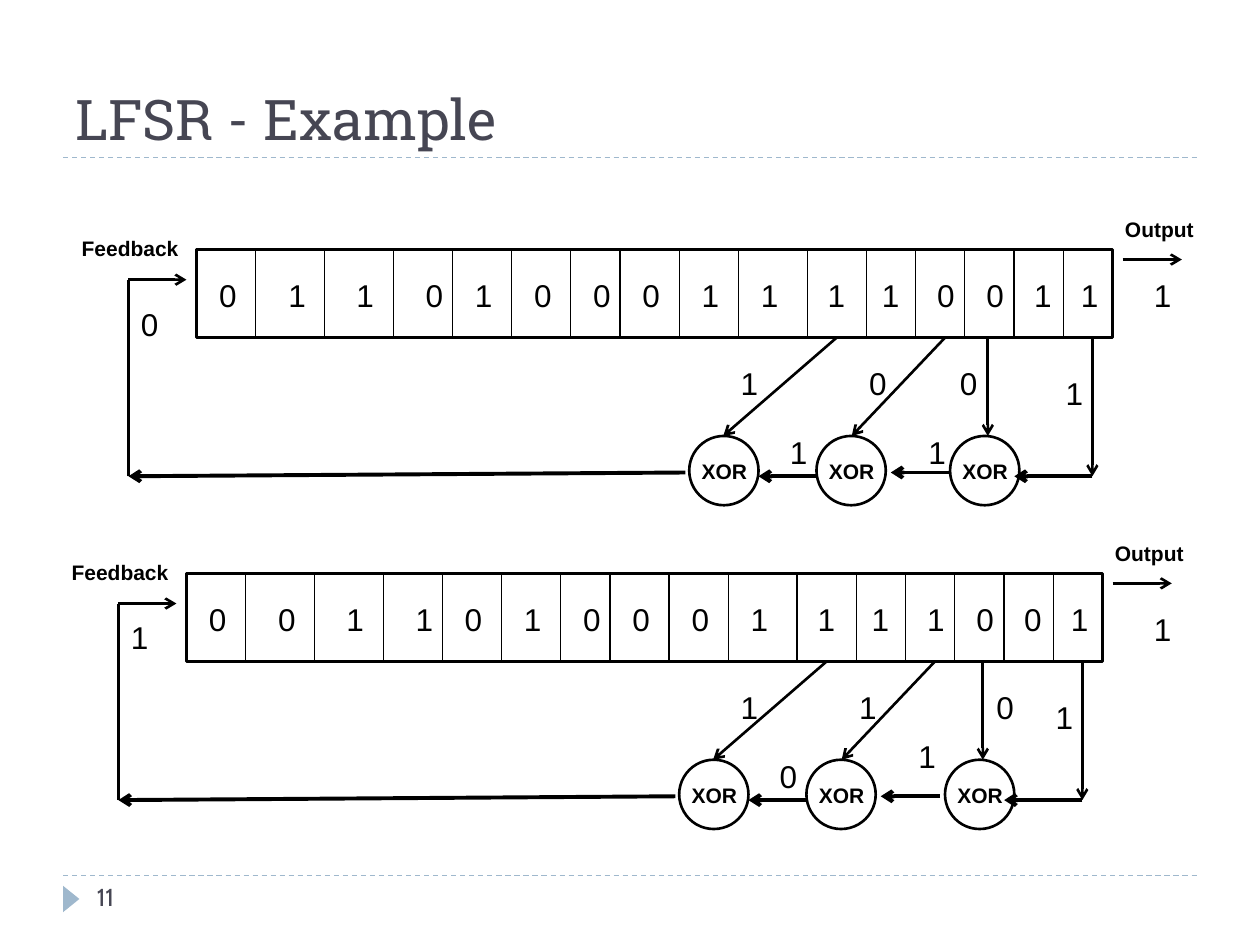
from itertools import accumulate

from lxml import etree
from pptx import Presentation
from pptx.dml.color import RGBColor
from pptx.enum.dml import MSO_LINE_DASH_STYLE as DASH
from pptx.enum.shapes import MSO_CONNECTOR, MSO_SHAPE as SHAPE
from pptx.enum.text import MSO_ANCHOR
from pptx.oxml.ns import qn
from pptx.util import Inches, Pt

BLACK, SLATE, BLUE = "000000", "464653", "9FB8CD"
color = RGBColor.from_string


def add_text(parts, text, left, top, width, height, size=18, font="Arial", ink=BLACK, bold=False):
    box = parts.add_textbox(Inches(left), Inches(top), Inches(width), Inches(height))
    box.text_frame.word_wrap = True
    line = box.text_frame.paragraphs[0]
    line.text = text
    line.font.size = Pt(size)
    line.font.name = font
    line.font.bold = bold
    line.font.color.rgb = color(ink)
    return box


def add_line(parts, x1, y1, x2, y2, weight=1.5, arrow=False, ink=BLACK):
    line = parts.add_connector(MSO_CONNECTOR.STRAIGHT, Inches(x1), Inches(y1), Inches(x2), Inches(y2))
    line.line.width = Pt(weight)
    line.line.color.rgb = color(ink)
    if arrow:
        etree.SubElement(line.line._get_or_add_ln(), qn("a:tailEnd"), type="arrow")
    etree.SubElement(line._element.spPr, qn("a:effectLst"))
    return line


prs = Presentation()
prs.slide_width, prs.slide_height = Inches(10), Inches(7.5)
slide = prs.slides.add_slide(prs.slide_layouts[6])

# Slide frame: rules, page marker, title and page number
for y in (6.95, 1.25):
    rule = add_line(slide.shapes, 0.5, y, 9.5, y, 0.75, ink=BLUE)
    rule.line.dash_style = DASH.DASH
marker = slide.shapes.add_shape(SHAPE.ISOSCELES_TRIANGLE, Inches(0.46), Inches(7.07), Inches(0.21), Inches(0.13))
marker.rotation = 90
marker.shadow.inherit = False
marker.fill.solid()
marker.fill.fore_color.rgb = color(BLUE)
marker.line.fill.background()
title = add_text(slide.shapes, "LFSR - Example", 0.5, 0.17, 9, 1.08, 32, "Roboto Slab", SLATE)
title.text_frame.vertical_anchor = MSO_ANCHOR.BOTTOM
add_text(slide.shapes, "11", 0.67, 6.95, 2.17, 0.4, 14, "Cabin", SLATE)

# Register geometry, measured from the register's top left corner
REG_W, REG_H = 7.27, 0.7
cell_units = [6, 7, 7, 6, 6, 6, 5, 6, 6, 7, 6, 5, 5, 5, 5, 5]
dividers = [units * REG_W / sum(cell_units) for units in accumulate(cell_units[:-1])]
bit_lefts = [0.08, 0.63, 1.17, 1.72, 2.11, 2.58, 3.05, 3.44,
             3.91, 4.38, 4.91, 5.34, 5.78, 6.17, 6.55, 6.92]
XOR_TOP, XOR_SIZE = 1.48, 0.55
FEEDBACK_Y = 1.8

# Each step: corner, register bits, shift of the last XOR, loose bits around the circuit
steps = [
    (slide.shapes, 1.56, 1.98, "0110100011110011", 0,
     [("1", 6.8, 0.94), ("0", 5.96, 0.86), ("1", 5.71, 1.41), ("0", 5.24, 0.86),
      ("1", 4.61, 1.41), ("1", 4.22, 0.86), ("0", -0.54, 0.39), ("1", 7.5, 0.16)]),
    (slide.shapes.add_group_shape().shapes, 1.48, 4.55, "0011010001111001", 0.04,
     [("1", 6.8, 0.94), ("1", 5.24, 0.86), ("1", 4.3, 0.86), ("1", 5.71, 1.25),
      ("0", 6.33, 0.86), ("0", 4.61, 1.41), ("1", -0.54, 0.31), ("1", 7.58, 0.24)]),
]

for parts, x, y, bits, last_shift, loose_bits in steps:
    # Shift register with its cells
    register = parts.add_shape(SHAPE.RECTANGLE, Inches(x), Inches(y), Inches(REG_W), Inches(REG_H))
    outlines = [register]
    for divider in dividers:
        add_line(parts, x + divider, y, x + divider, y + REG_H, 0.75)
    for bit, left in zip(bits, bit_lefts):
        add_text(parts, bit, x + left, y + 0.16, 0.23, 0.4)

    # XOR gates
    for left in (5.98 + last_shift, 4.92, 3.91):
        gate = parts.add_shape(SHAPE.OVAL, Inches(x + left), Inches(y + XOR_TOP), Inches(XOR_SIZE), Inches(XOR_SIZE))
        outlines.append(gate)
        add_text(parts, "XOR", x + left, y + XOR_TOP + 0.13, 0.62, 0.3, 12, bold=True)
    for outline in outlines:
        outline.shadow.inherit = False
        outline.fill.background()
        outline.line.color.rgb = color(BLACK)
        outline.line.width = Pt(1.5)

    # Taps from the register down to the gates and the feedback path
    last_tap = 6.28 + last_shift
    for start, end, bottom in ((last_tap, last_tap, XOR_TOP), (7.11, 7.11, FEEDBACK_Y),
                               (5.94, 5.2, XOR_TOP), (5.08, 4.18, XOR_TOP)):
        add_line(parts, x + start, y + REG_H, x + end, y + bottom, arrow=True)

    # Feedback path, from right to left and up to the input
    for start, start_y, end, end_y in ((7.11, FEEDBACK_Y, 6.49, FEEDBACK_Y), (5.98, 1.77, 5.51, 1.77),
                                       (4.92, FEEDBACK_Y, 4.46, FEEDBACK_Y), (3.88, 1.77, -0.54, FEEDBACK_Y)):
        add_line(parts, x + start, y + start_y, x + end, y + end_y, 2.25, arrow=True)
    add_line(parts, x - 0.54, y + FEEDBACK_Y, x - 0.54, y + 0.24)
    add_line(parts, x - 0.54, y + 0.24, x - 0.08, y + 0.24, arrow=True)
    add_line(parts, x + 7.35, y + 0.08, x + 7.82, y + 0.08, arrow=True)

    # Labels and the bits travelling on the wires
    add_text(parts, "Feedback", x - 1.01, y - 0.16, 1.02, 0.3, 12, bold=True)
    add_text(parts, "Output", x + REG_W, y - 0.31, 1.02, 0.3, 12, bold=True)
    for bit, left, top in loose_bits:
        add_text(parts, bit, x + left, y + top, 0.23, 0.4)

prs.save("out.pptx")
